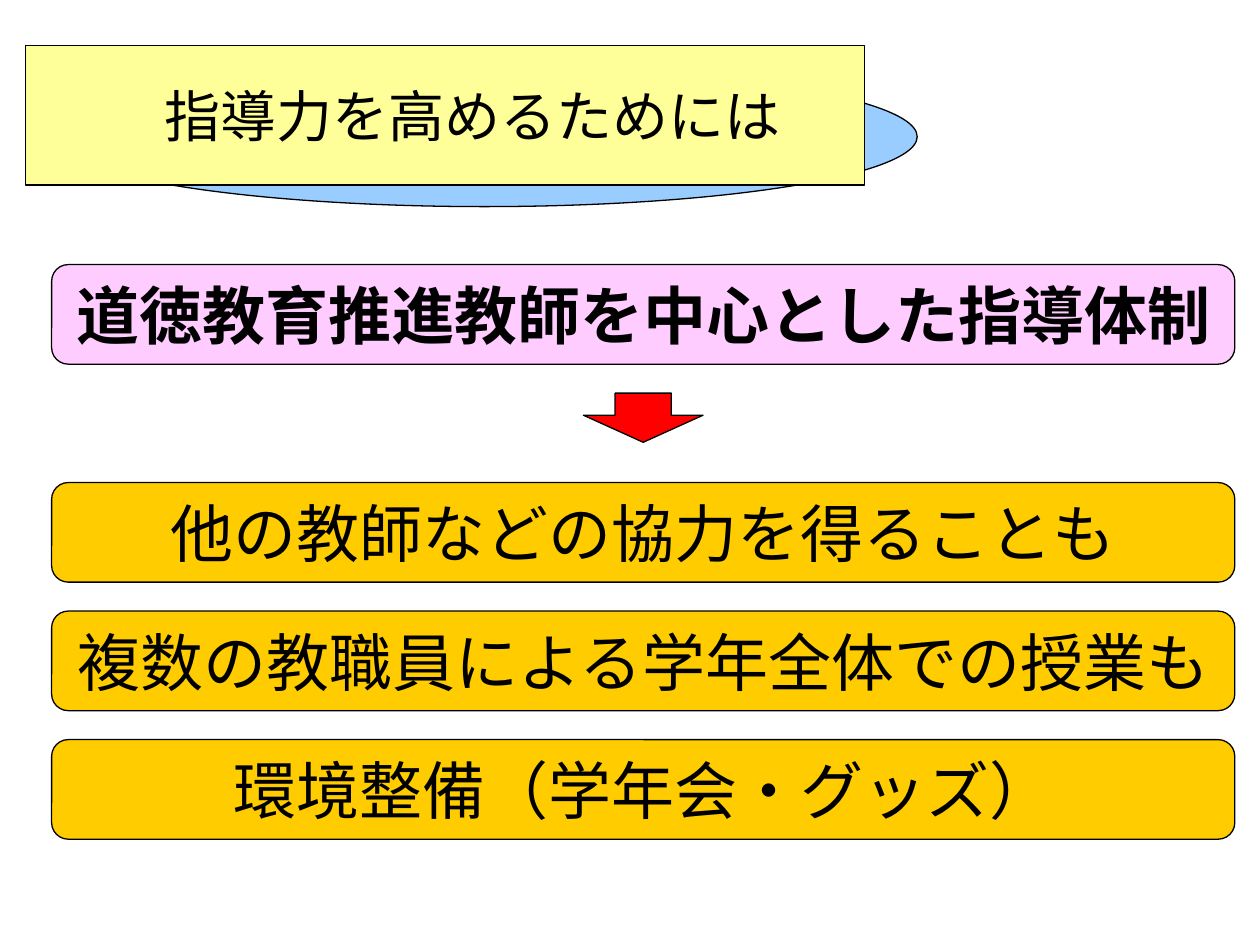
from pptx import Presentation
from pptx.dml.color import RGBColor
from pptx.enum.shapes import MSO_SHAPE as Shape
from pptx.enum.text import MSO_ANCHOR as Anchor, MSO_AUTO_SIZE as AutoSize, PP_ALIGN as Align
from pptx.oxml import parse_xml
from pptx.oxml.ns import nsdecls
from pptx.util import Inches, Pt

BANNER_LEFT, BANNER_WIDTH, BANNER_HEIGHT = 0.41, 9.39, 0.79
MEASURES = [
    "他の教師などの協力を得ることも",
    "複数の教職員による学年全体での授業も",
    "環境整備（学年会・グッズ）",
]


def color(value):
    return RGBColor.from_string(value)


def paint(shape, fill):
    shape.fill.solid()
    shape.fill.fore_color.rgb = color(fill)
    shape.line.color.rgb = color("000000")
    shape.line.width = Pt(0.75)


def add_figure(page, kind, box, fill):
    figure = page.shapes.add_shape(kind, *map(Inches, box))
    figure.shadow.inherit = False
    paint(figure, fill)
    return figure


def write(shape, text, size, bold=False):
    frame = shape.text_frame
    frame.word_wrap = False
    frame.auto_size = AutoSize.NONE
    frame.vertical_anchor = Anchor.MIDDLE
    para = frame.paragraphs[0]
    para.alignment = Align.CENTER
    span = para.add_run()
    span.text = text
    span.font.name = "Arial"
    span.font.size = Pt(size)
    span.font.bold = bold
    span.font.color.rgb = color("000000")


def add_heading(page, box):
    """Title in a yellow ellipse, with a blue ellipse offset behind it."""
    left, top, width, height = box
    backing = add_figure(page, Shape.OVAL, (left + 0.21, top + 0.17, width + 0.21, height), "99CCFF")
    title = page.shapes.title
    title.left, title.top, title.width, title.height = map(Inches, box)
    outline = parse_xml(f'<a:prstGeom {nsdecls("a")} prst="ellipse"><a:avLst/></a:prstGeom>')
    title.element.spPr.append(outline)
    paint(title, "FFFF99")
    write(title, "指導力を高めるためには", 32)
    title.text_frame.margin_left = Inches(0.54)
    title.text_frame.margin_right = Inches(0.1)
    backing.element.addnext(title.element)


def add_banner(page, top, text, fill, bold=False):
    box = (BANNER_LEFT, top, BANNER_WIDTH, BANNER_HEIGHT)
    banner = add_figure(page, Shape.ROUNDED_RECTANGLE, box, fill)
    write(banner, text, 36, bold)


def add_down_arrow(page, box):
    arrow = add_figure(page, Shape.DOWN_ARROW, box, "FF0000")
    arrow.adjustments[0] = 0.47
    arrow.adjustments[1] = 0.55


def add_measures(page, top, pitch):
    for index, text in enumerate(MEASURES):
        add_banner(page, top + index * pitch, text, "FFCC00")


def main():
    deck = Presentation()
    deck.slide_width, deck.slide_height = Inches(10), Inches(7.5)
    page = deck.slides.add_slide(deck.slide_layouts[5])
    add_heading(page, (0.2, 0.36, 6.66, 1.11))
    add_banner(page, 2.1, "道徳教育推進教師を中心とした指導体制", "FFCCFF", bold=True)
    add_down_arrow(page, (4.63, 3.12, 0.95, 0.39))
    add_measures(page, 3.83, 1.02)
    deck.save("out.pptx")


if __name__ == "__main__":
    main()
